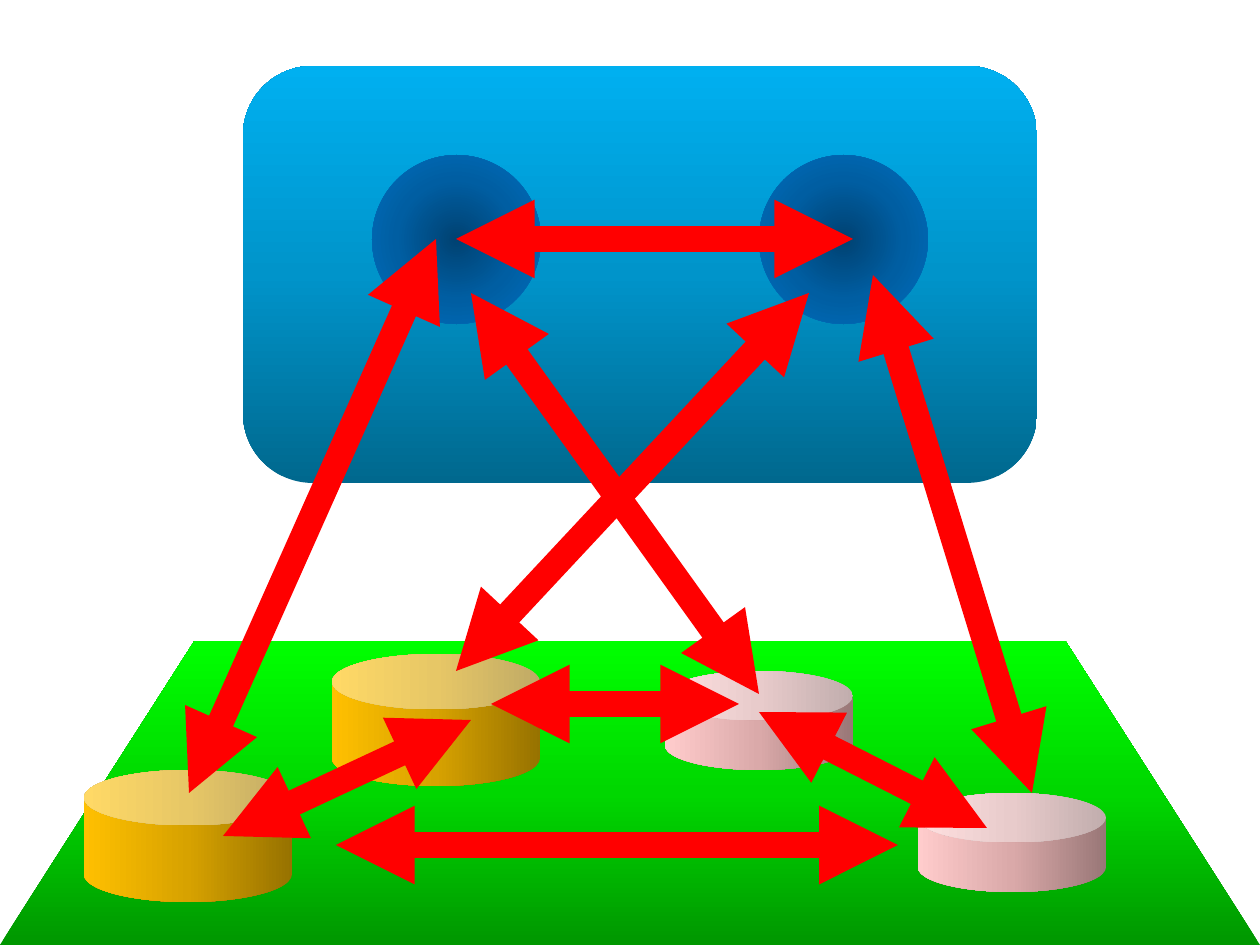
from lxml import etree
from pptx import Presentation
from pptx.dml.color import RGBColor
from pptx.enum.shapes import MSO_CONNECTOR, MSO_SHAPE
from pptx.oxml import parse_xml
from pptx.oxml.ns import nsdecls, qn
from pptx.util import Pt

ROUNDED = MSO_SHAPE.ROUNDED_RECTANGLE
OVAL = MSO_SHAPE.OVAL
TRAPEZOID = MSO_SHAPE.TRAPEZOID
CAN = MSO_SHAPE.CAN
STRAIGHT = MSO_CONNECTOR.STRAIGHT
PX = 914400 / 126

UP = '<a:lin ang="16200000" scaled="1"/>'
LEFT = '<a:lin ang="10800000" scaled="1"/>'
RADIAL = '<a:path path="circle"><a:fillToRect l="50000" t="50000" r="50000" b="50000"/></a:path>'

SKY = ("00688E", "0094CA", "00B0F0")
BLUE = ("004272", "005EA2", "0070C0")
GREEN = ("009700", "00D700", "00FF00")
GOLD = ("977200", "D7A200", "FFC000")
PINK = ("997777", "DAA9A9", "FFCCCC")


def emu(*lengths):
    return [round(n * PX) for n in lengths]


def rgb(color):
    return RGBColor.from_string(color)


prs = Presentation()
prs.slide_width, prs.slide_height = emu(1260, 945)
s = prs.slides.add_slide(prs.slide_layouts[6])

shapes = [
    (ROUNDED, (243, 66, 794, 417), None, SKY, UP),
    (OVAL, (372, 155, 169, 169), None, BLUE, RADIAL),
    (OVAL, (759, 155, 169, 169), None, BLUE, RADIAL),
    (TRAPEZOID, (0, 641, 1260, 304), 0.64, GREEN, UP),
    (CAN, (332, 654, 208, 132), 0.42, GOLD, LEFT),
    (CAN, (84, 770, 208, 132), 0.42, GOLD, LEFT),
    (CAN, (665, 671, 188, 99), 0.5, PINK, LEFT),
    (CAN, (918, 793, 188, 99), 0.5, PINK, LEFT),
]
for kind, box, adj, colors, direction in shapes:
    sp = s.shapes.add_shape(kind, *emu(*box))
    sp.shadow.inherit = False
    sp.line.fill.background()
    if adj is not None:
        sp.adjustments[0] = adj
    sp.fill.gradient()
    stops = "".join(
        f'<a:gs pos="{i * 50000}"><a:srgbClr val="{c}"/></a:gs>'
        for i, c in enumerate(colors)
    )
    grad = parse_xml(
        f'<a:gradFill {nsdecls("a")} rotWithShape="1">'
        f"<a:gsLst>{stops}</a:gsLst>{direction}</a:gradFill>"
    )
    spPr = sp.element.spPr
    spPr.replace(spPr.find(qn("a:gradFill")), grad)

arrows = [
    (759, 712, 987, 828),
    (873, 275, 1032, 793),
    (456, 239, 853, 239),
    (189, 793, 436, 239),
    (223, 836, 471, 720),
    (491, 704, 739, 704),
    (336, 845, 898, 845),
    (456, 671, 809, 293),
    (759, 694, 471, 293),
]
for ends in arrows:
    line = s.shapes.add_connector(STRAIGHT, *emu(*ends))
    line.line.color.rgb = rgb("FF0000")
    line.line.width = Pt(15)
    spPr = line.element.spPr
    ln = spPr.find(qn("a:ln"))
    for tag in ("a:headEnd", "a:tailEnd"):
        etree.SubElement(ln, qn(tag), type="triangle")
    etree.SubElement(spPr, qn("a:effectLst"))

prs.save("out.pptx")
